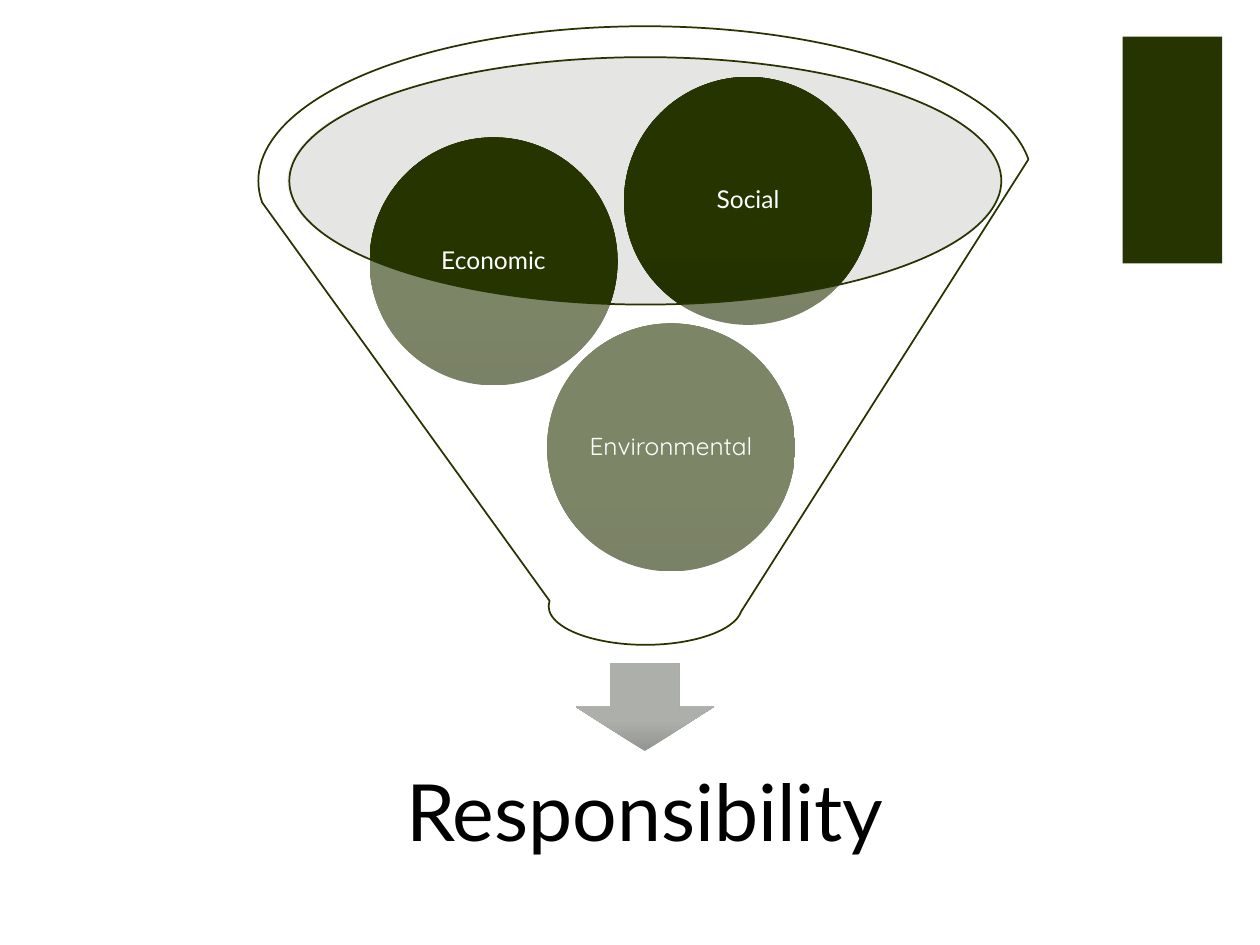
from lxml.etree import SubElement
from pptx import Presentation
from pptx.dml.color import RGBColor
from pptx.enum.shapes import MSO_SHAPE
from pptx.enum.text import MSO_ANCHOR, PP_ALIGN
from pptx.oxml.ns import qn
from pptx.util import Cm, Pt

OLIVE = RGBColor(0x26, 0x34, 0x01)
CIRCLE_TOP = RGBColor(0x26, 0x35, 0x00)
CIRCLE_BASE = RGBColor(0x21, 0x2D, 0x00)
ARROW_TOP = RGBColor(0xAD, 0xAF, 0xAA)
ARROW_BASE = RGBColor(0x94, 0x95, 0x92)
MOUTH_GREY = RGBColor(0xBE, 0xBF, 0xBD)
WHITE = RGBColor(0xFF, 0xFF, 0xFF)
BLACK = RGBColor(0x00, 0x00, 0x00)

CIRCLE_SIZE = 5
CIRCLES = [
    ("Environmental", "Quicksand", 5.82, 5.99),
    ("Economic", "Lato", 2.24, 2.24),
    ("Social", "Lato", 7.37, 1.02),
]


def add_plain_shape(slide, kind, left, top, width, height):
    """Add a preset shape, in centimetres, without shadow or outline."""
    shape = slide.shapes.add_shape(kind, Cm(left), Cm(top), Cm(width), Cm(height))
    shape.shadow.inherit = False
    shape.line.fill.background()
    return shape


def fill_solid(shape, color, opacity=100):
    """Fill a shape with one colour at an opacity in percent."""
    shape.fill.solid()
    shape.fill.fore_color.rgb = color
    if opacity < 100:
        color_element = shape._element.spPr.find(qn("a:solidFill")).find(qn("a:srgbClr"))
        SubElement(color_element, qn("a:alpha"), val=str(opacity * 1000))


def fill_rising(shape, base, top):
    """Fill a shape with a gradient that rises from its base."""
    shape.fill.gradient()
    shape.fill.gradient_angle = 90
    for stop, position, color in zip(shape.fill.gradient_stops, (0, 0.35), (base, top)):
        stop.position = position
        stop.color.rgb = color


def write_label(shape, text, font_name, size, color, margin):
    """Write one centred line of text in a shape."""
    frame = shape.text_frame
    frame.word_wrap = True
    frame.vertical_anchor = MSO_ANCHOR.MIDDLE
    frame.margin_left = frame.margin_right = Cm(margin)
    frame.margin_top = frame.margin_bottom = Cm(margin)
    paragraph = frame.paragraphs[0]
    paragraph.alignment = PP_ALIGN.CENTER
    paragraph.line_spacing = 0.9
    run = paragraph.add_run()
    run.text = text
    run.font.name = font_name
    run.font.size = Pt(size)
    run.font.color.rgb = color


def add_side_bar(slide, left, top, width, height):
    """Place the decorative bar at the right edge."""
    bar = add_plain_shape(slide, MSO_SHAPE.RECTANGLE, left, top, width, height)
    fill_solid(bar, OLIVE)


def add_result(slide, left, top, width, height):
    """Place the arrow and the outcome text below it."""
    arrow_width = 2.79
    arrow = add_plain_shape(slide, MSO_SHAPE.DOWN_ARROW,
                            left + (width - arrow_width) / 2, top, arrow_width, 1.78)
    fill_rising(arrow, ARROW_BASE, ARROW_TOP)
    text_top = 1.42
    outcome = slide.shapes.add_textbox(Cm(left), Cm(top + text_top),
                                       Cm(width), Cm(height - text_top))
    write_label(outcome, "Responsibility", "Lato", 45, BLACK, 0.89)


def add_funnel(slide, left, top, width, height):
    """Place the funnel with its mouth and the three circles inside."""
    mouth = add_plain_shape(slide, MSO_SHAPE.OVAL, left + 0.58, top + 0.61, 14.38, 5)
    fill_solid(mouth, MOUTH_GREY, 40)
    for text, font_name, across, down in CIRCLES:
        circle = add_plain_shape(slide, MSO_SHAPE.OVAL, left + across, top + down,
                                 CIRCLE_SIZE, CIRCLE_SIZE)
        fill_rising(circle, CIRCLE_BASE, CIRCLE_TOP)
        write_label(circle, text, font_name, 14, WHITE, 0.05)
    funnel = add_plain_shape(slide, MSO_SHAPE.FUNNEL, left, top, width, height)
    fill_solid(funnel, WHITE, 40)
    funnel.line.color.rgb = OLIVE
    funnel.line.width = Pt(1)


def main():
    """Build the slide and save it."""
    presentation = Presentation()
    presentation.slide_width = Cm(25.4)
    presentation.slide_height = Cm(19.05)
    slide = presentation.slides.add_slide(presentation.slide_layouts[6])
    add_side_bar(slide, 22.63, 0.74, 2.01, 4.57)
    add_result(slide, 6.32, 13.36, 13.36, 4.77)
    add_funnel(slide, 5.21, 0.53, 15.6, 12.47)
    presentation.save("out.pptx")


if __name__ == "__main__":
    main()
